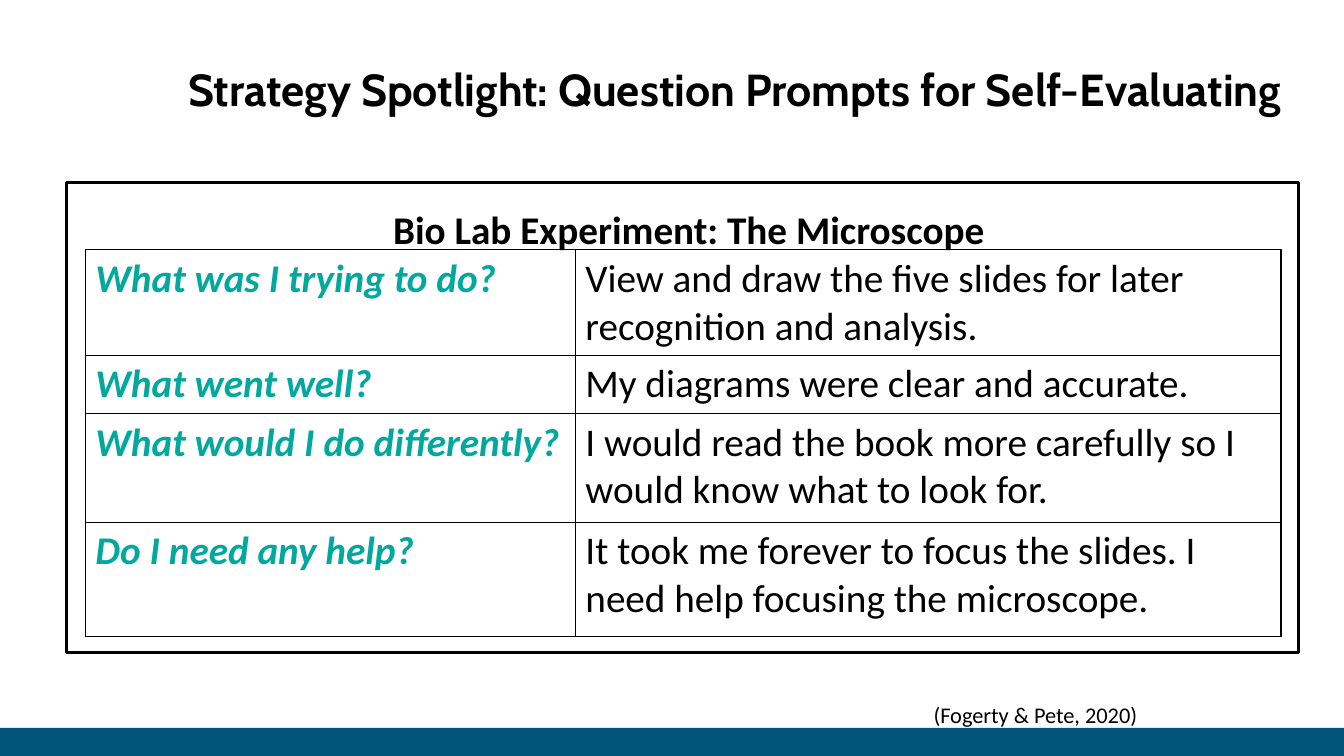
from lxml.etree import SubElement
from pptx import Presentation
from pptx.dml.color import RGBColor
from pptx.enum.shapes import MSO_SHAPE as SHAPE
from pptx.enum.text import MSO_ANCHOR as ANCHOR, PP_ALIGN as ALIGN
from pptx.oxml.ns import qn
from pptx.util import Pt

BLACK = RGBColor(0x00, 0x00, 0x00)
TEAL = RGBColor(0x00, 0xA8, 0x9E)
NAVY = RGBColor(0x00, 0x55, 0x79)

BODY = {"name": "Calibri", "size": Pt(28), "bold": False, "italic": False}
QUESTION = BODY | {"bold": True, "italic": True}
HEADING = BODY | {"bold": True}
TITLE = HEADING | {"name": "Cabin", "size": Pt(32)}
CITATION = BODY | {"size": Pt(16)}

COLUMN_WIDTHS = (350, 504)
ROW_HEIGHTS = (75.5, 41.5, 77.5, 81.5)
PROMPTS = (
    ("What was I trying to do?",
     "View and draw the five slides for later recognition and analysis."),
    ("What went well?",
     "My diagrams were clear and accurate."),
    ("What would I do differently?",
     "I would read the book more carefully so I would know what to look for."),
    ("Do I need any help?",
     "It took me forever to focus the slides. I need help focusing the microscope."),
)


def write(tf, text, font, color=BLACK, align=ALIGN.LEFT):
    p = tf.paragraphs[0]
    p.alignment = align
    r = p.add_run()
    r.text = text
    for key, value in font.items():
        setattr(r.font, key, value)
    r.font.color.rgb = color


def set_frame(tf, anchor=ANCHOR.TOP, left=7.2, top=3.6, right=7.2, bottom=3.6):
    tf.word_wrap = True
    tf.vertical_anchor = anchor
    for side, inset in zip(("left", "top", "right", "bottom"),
                           (left, top, right, bottom)):
        setattr(tf, f"margin_{side}", Pt(inset))


def add_rect(s, x, y, w, h, fill=None, line=None):
    sp = s.shapes.add_shape(SHAPE.RECTANGLE, Pt(x), Pt(y), Pt(w), Pt(h))
    sp.shadow.inherit = False
    if fill is None:
        sp.fill.background()
    else:
        sp.fill.solid()
        sp.fill.fore_color.rgb = fill
    if line is None:
        sp.line.fill.background()
    else:
        sp.line.color.rgb = line
        sp.line.width = Pt(2.25)
    return sp


def add_text(s, x, y, w, h):
    return s.shapes.add_textbox(Pt(x), Pt(y), Pt(w), Pt(h)).text_frame


def set_borders(cell):
    """Draw a thin black line on all four sides; borders must precede the fill."""
    tc_pr = cell._tc.get_or_add_tcPr()
    for side in ("a:lnL", "a:lnR", "a:lnT", "a:lnB"):
        ln = SubElement(tc_pr, qn(side), w=str(Pt(1)))
        fill = SubElement(ln, qn("a:solidFill"))
        SubElement(fill, qn("a:srgbClr"), val=str(BLACK))


def add_prompt_table(s, x, y):
    frame = s.shapes.add_table(len(PROMPTS), len(COLUMN_WIDTHS), Pt(x), Pt(y),
                               Pt(sum(COLUMN_WIDTHS)), Pt(sum(ROW_HEIGHTS)))
    table = frame.table
    table.first_row = table.horz_banding = False
    for column, width in zip(table.columns, COLUMN_WIDTHS):
        column.width = Pt(width)
    for row, height, prompt in zip(table.rows, ROW_HEIGHTS, PROMPTS):
        row.height = Pt(height)
        for cell, text, font, color in zip(row.cells, prompt, (QUESTION, BODY),
                                           (TEAL, BLACK)):
            set_borders(cell)
            cell.fill.background()
            write(cell.text_frame, text, font, color)


def main():
    prs = Presentation()
    prs.slide_width, prs.slide_height = Pt(960), Pt(540)
    s = prs.slides.add_slide(prs.slide_layouts[6])

    add_rect(s, 0, 520, 960, 20, fill=NAVY)

    title = add_text(s, 134.5, 29, 825, 68)
    set_frame(title, ANCHOR.MIDDLE, 0, 0, 0, 0)
    write(title, "Strategy Spotlight: Question Prompts for Self-Evaluating", TITLE)

    panel = add_rect(s, 47.5, 130.5, 880, 335.5, line=BLACK).text_frame
    set_frame(panel, left=16, top=16)
    write(panel, "Bio Lab Experiment: The Microscope", HEADING, align=ALIGN.CENTER)

    add_prompt_table(s, 61, 178.5)

    citation = add_text(s, 322.5, 497.5, 497, 26.5)
    set_frame(citation)
    write(citation, "(Fogerty & Pete, 2020)", CITATION, align=ALIGN.RIGHT)

    prs.save("out.pptx")


if __name__ == "__main__":
    main()
